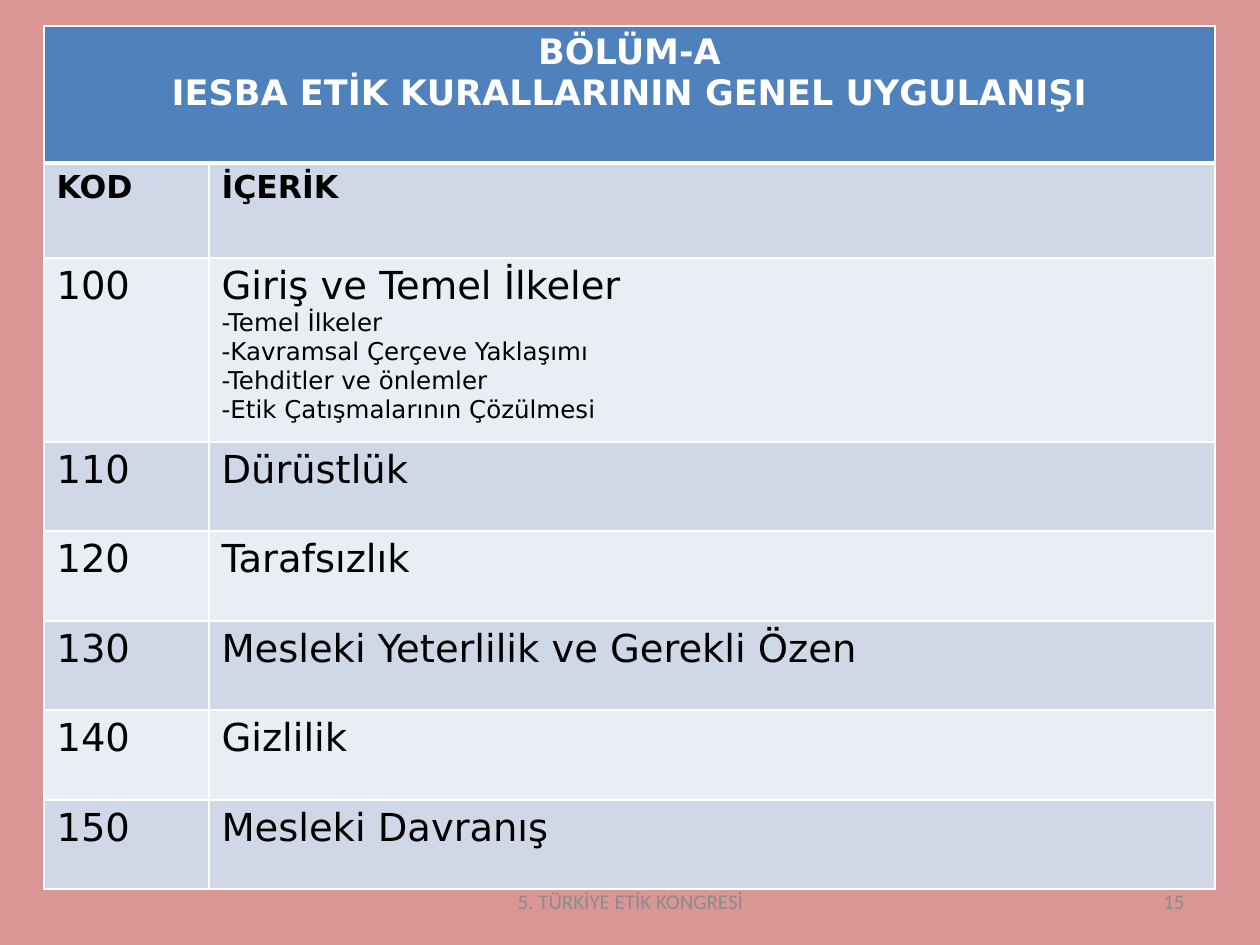
from lxml import etree
from pptx import Presentation
from pptx.dml.color import RGBColor
from pptx.enum.text import MSO_ANCHOR, PP_ALIGN
from pptx.oxml.ns import qn
from pptx.util import Pt

PX = 914400 // 126
LEFT, MID, RIGHT = PP_ALIGN.LEFT, PP_ALIGN.CENTER, PP_ALIGN.RIGHT
CENTER = MSO_ANCHOR.MIDDLE

COLORS = {
    "back": "D99694", "head": "4F81BD", "dark": "D0D8E8", "light": "E9EDF4",
    "white": "FFFFFF", "black": "000000", "gray": "8C8C8C",
}

TITLE = ["BÖLÜM-A", "IESBA ETİK KURALLARININ GENEL UYGULANIŞI"]
ROWS = [
    ("KOD", ["İÇERİK"]),
    ("100", ["Giriş ve Temel İlkeler", "-Temel İlkeler",
             "-Kavramsal Çerçeve Yaklaşımı", "-Tehditler ve önlemler",
             "-Etik Çatışmalarının Çözülmesi"]),
    ("110", ["Dürüstlük"]),
    ("120", ["Tarafsızlık"]),
    ("130", ["Mesleki Yeterlilik ve Gerekli Özen"]),
    ("140", ["Gizlilik"]),
    ("150", ["Mesleki Davranış"]),
]
WIDTHS = [165, 1006]
HEIGHTS = [137, 95, 184] + [89 + i % 2 for i in range(5)]


def rgb(name):
    return RGBColor.from_string(COLORS[name])


class Deck:
    body, small = "DejaVu Sans", "Calibri"

    def __init__(self, slide):
        self.slide = slide
        fill = slide.background.fill
        fill.solid()
        fill.fore_color.rgb = rgb("back")

    def text(self, frame, lines, sizes, font, color, bold=False, align=LEFT):
        """Fill a frame; the last size holds for all further lines."""
        for i, line in enumerate(lines):
            para = frame.paragraphs[0] if i == 0 else frame.add_paragraph()
            para.text = line
            para.alignment = align
            para.font.size = Pt(sizes[min(i, len(sizes) - 1)])
            para.font.name = font
            para.font.bold = bold
            para.font.color.rgb = rgb(color)

    def label(self, words, x, y, w, h, align):
        box = self.slide.shapes.add_textbox(x * PX, y * PX, w * PX, h * PX)
        frame = box.text_frame
        frame.word_wrap = True
        frame.vertical_anchor = CENTER
        self.text(frame, [words], [12], self.small, "gray", align=align)

    def grid(self, x, y, widths, heights):
        shape = self.slide.shapes.add_table(
            len(heights), len(widths), x * PX, y * PX,
            sum(widths) * PX, sum(heights) * PX)
        table = shape.table
        for col, width in zip(table.columns, widths):
            col.width = width * PX
        for row, height in zip(table.rows, heights):
            row.height = height * PX
        return table

    def paint(self, cell, fill, top=1, bottom=1):
        """Set the white borders, then the fill, of a cell."""
        props = cell._tc.get_or_add_tcPr()
        for side, width in zip("LRTB", (1, 1, top, bottom)):
            line = etree.SubElement(props, qn(f"a:ln{side}"), w=str(Pt(width)))
            solid = etree.SubElement(line, qn("a:solidFill"))
            etree.SubElement(solid, qn("a:srgbClr"), val=COLORS["white"])
        cell.fill.solid()
        cell.fill.fore_color.rgb = rgb(fill)


def main():
    prs = Presentation()
    prs.slide_width, prs.slide_height = 1260 * PX, 945 * PX
    deck = Deck(prs.slides.add_slide(prs.slide_layouts[6]))

    # Table with a merged heading
    table = deck.grid(44, 26, WIDTHS, HEIGHTS)
    head = table.cell(0, 0)
    head.merge(table.cell(0, 1))
    for cell in table.rows[0].cells:
        deck.paint(cell, "head", bottom=3)
    deck.text(head.text_frame, TITLE, [20], deck.body, "white", True, MID)

    # Code rows in two shades
    for i, (code, lines) in enumerate(ROWS, 1):
        first = i == 1
        sizes = [18] if first else [22, 14]
        for j, words in enumerate(([code], lines)):
            cell = table.cell(i, j)
            deck.paint(cell, "dark" if i % 2 else "light", top=3 if first else 1)
            deck.text(cell.text_frame, words, sizes, deck.body, "black", first)

    # Footer
    deck.label("15", 903, 876, 294, 50, RIGHT)
    deck.label("5. TÜRKİYE ETİK KONGRESİ", 431, 876, 399, 50, MID)

    prs.save("out.pptx")


if __name__ == "__main__":
    main()
